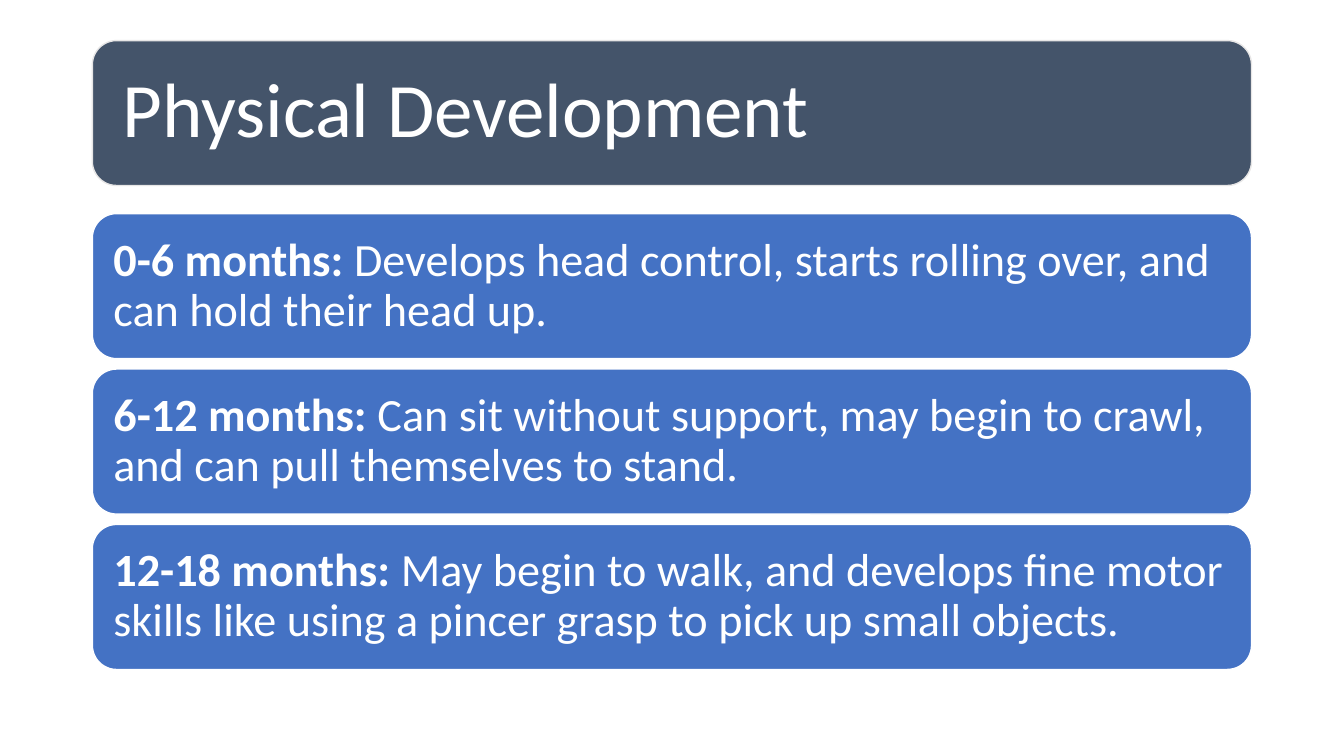
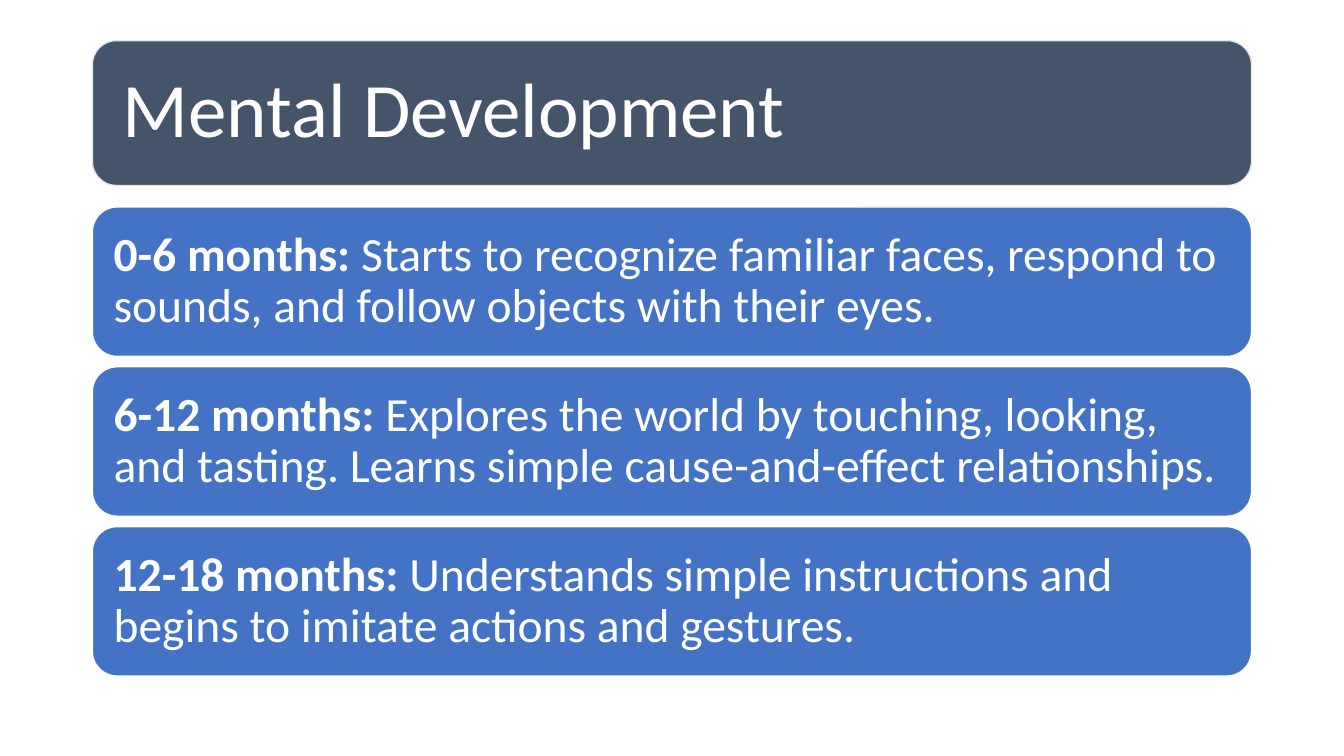
import dataclasses

import pptx
import pptx.dml.color
import pptx.enum.shapes
import pptx.enum.text
import pptx.util

Pt = pptx.util.Pt
Color = pptx.dml.color.RGBColor


@dataclasses.dataclass(frozen=True)
class Theme:
    font: str = "Calibri"
    title_size: int = 55
    text: Color = Color.from_string("FFFFFF")
    band: Color = Color.from_string("44546A")
    band_line: Color = Color.from_string("E7E6E6")
    card: Color = Color.from_string("4472C4")
    card_line: Color = Color.from_string("FFFFFF")


theme = Theme()
left, width = 66, 828
band_top, band_height = 29, 103.5
cards_middle, card_gap = 315.4, 7.4
card_height_per_size = 3.14

topics = [
    ("Physical Development", 33, [
        ("0-6 months:", "Develops head control, starts rolling over, and can hold their head up."),
        ("6-12 months:", "Can sit without support, may begin to crawl, and can pull themselves to stand."),
        ("12-18 months:", "May begin to walk, and develops fine motor skills like using a pincer grasp "
                          "to pick up small objects."),
    ]),
    ("Mental Development", 34, [
        ("0-6 months:", "Starts to recognize familiar faces, respond to sounds, and follow objects "
                        "with their eyes."),
        ("6-12 months:", "Explores the world by touching, looking, and tasting. Learns simple "
                         "cause-and-effect relationships."),
        ("12-18 months:", "Understands simple instructions and begins to imitate actions and gestures."),
    ]),
]


def add_panel(page, top, height, fill, line):
    panel = page.shapes.add_shape(
        pptx.enum.shapes.MSO_SHAPE.ROUNDED_RECTANGLE, Pt(left), Pt(top), Pt(width), Pt(height))
    panel.shadow.inherit = False
    panel.fill.solid()
    panel.fill.fore_color.rgb = fill
    panel.line.color.rgb = line
    panel.line.width = Pt(1)
    return panel


def write(box, *texts, size, inset, bold_first=False):
    frame = box.text_frame
    frame.word_wrap = True
    frame.auto_size = pptx.enum.text.MSO_AUTO_SIZE.NONE
    frame.vertical_anchor = pptx.enum.text.MSO_ANCHOR.MIDDLE
    frame.margin_left = frame.margin_right = Pt(inset)
    frame.margin_top = frame.margin_bottom = Pt(inset)
    para = frame.paragraphs[0]
    para.alignment = pptx.enum.text.PP_ALIGN.LEFT
    para.line_spacing = 0.9
    for index, text in enumerate(texts):
        span = para.add_run()
        span.text = text
        span.font.name = theme.font
        span.font.size = Pt(size)
        span.font.bold = bold_first and index == 0
        span.font.color.rgb = theme.text


deck = pptx.Presentation()
deck.slide_width, deck.slide_height = Pt(960), Pt(540)
title_only = deck.slide_layouts.get_by_name("Title Only")

for heading, text_size, stages in topics:
    page = deck.slides.add_slide(title_only)
    band = add_panel(page, band_top, band_height, theme.band, theme.band_line)
    title = page.shapes.title
    title.left, title.top = band.left, band.top
    title.width, title.height = band.width, band.height
    band.element.addnext(title.element)
    write(title, heading, size=theme.title_size, inset=21.6)

    card_height = card_height_per_size * text_size
    pitch = card_height + card_gap
    first_top = cards_middle - (len(stages) * pitch - card_gap) / 2
    for row, (age, skills) in enumerate(stages):
        card = add_panel(page, first_top + row * pitch, card_height, theme.card, theme.card_line)
        write(card, age, f" {skills}", size=text_size, inset=10, bold_first=True)

deck.save("out.pptx")
